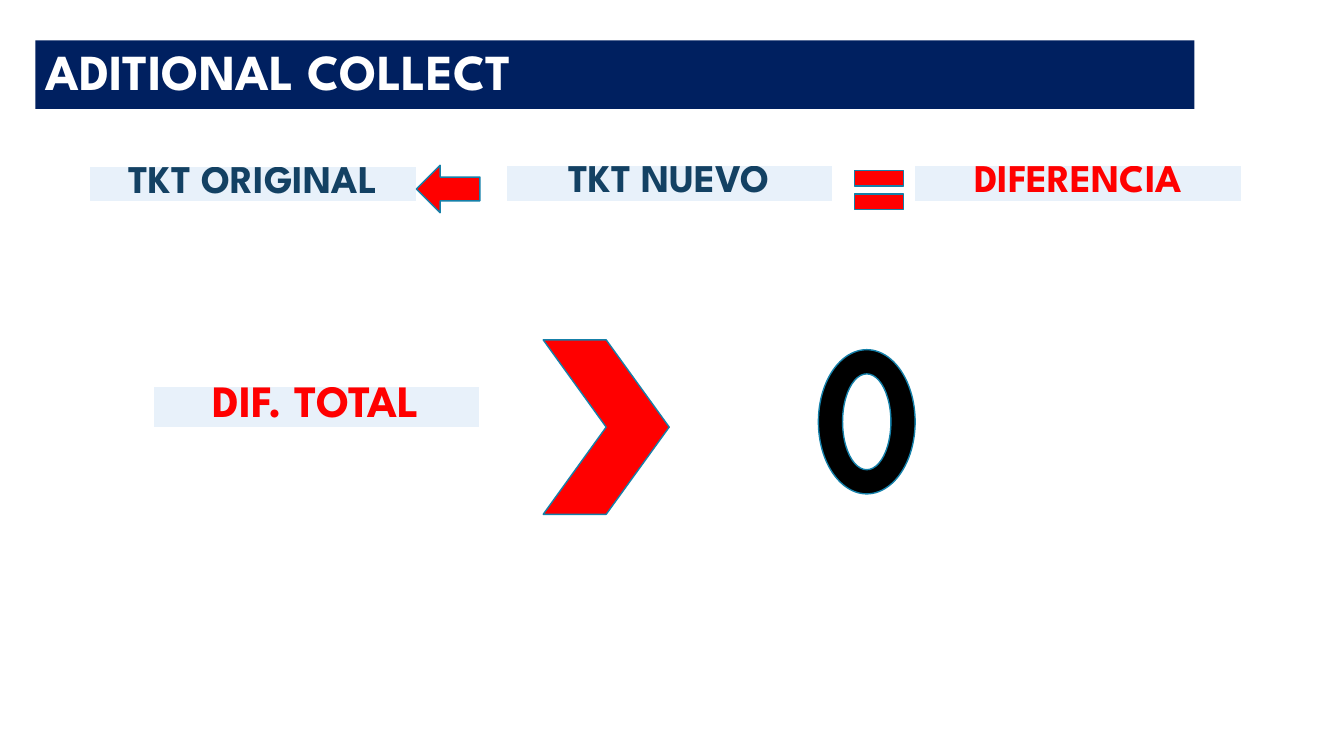
import pptx
import pptx.util
import pptx.dml.color
import pptx.enum.shapes
import pptx.enum.text
import pptx.oxml
import pptx.oxml.ns

Pt = pptx.util.Pt
MSO = pptx.enum.shapes.MSO_SHAPE
ALIGN = pptx.enum.text.PP_ALIGN
FONT = "League Spartan"
COLORS = {
    "navy": "002060",
    "blue": "134163",
    "pale": "E8F1FA",
    "outline": "1580A9",
    "red": "FF0000",
    "black": "000000",
    "white": "FFFFFF",
}


def rgb(color):
    return pptx.dml.color.RGBColor.from_string(COLORS[color])


def paint(fill, color):
    fill.solid()
    fill.fore_color.rgb = rgb(color)


def style_text(paragraph, size, color, align):
    paragraph.alignment = align
    paragraph.font.name = FONT
    paragraph.font.size = Pt(size)
    paragraph.font.bold = True
    paragraph.font.color.rgb = rgb(color)


def add_heading(slide, text):
    heading = slide.shapes.title
    heading.left, heading.top = Pt(25.2), Pt(28.8)
    heading.width, heading.height = Pt(828), Pt(49)
    paint(heading.fill, "navy")
    frame = heading.text_frame
    frame.text = text
    frame.auto_size = pptx.enum.text.MSO_AUTO_SIZE.NONE
    frame.vertical_anchor = pptx.enum.text.MSO_ANCHOR.MIDDLE
    frame.paragraphs[0].line_spacing = 0.9
    style_text(frame.paragraphs[0], 36, "white", ALIGN.LEFT)


def add_borders(cell):
    properties = cell._tc.get_or_add_tcPr()
    for side in ("lnL", "lnR", "lnT", "lnB"):
        properties.append(pptx.oxml.parse_xml(
            f'<a:{side} {pptx.oxml.ns.nsdecls("a")} w="{Pt(1)}"><a:solidFill>'
            f'<a:srgbClr val="{COLORS["white"]}"/></a:solidFill></a:{side}>'))


def add_label(slide, text, left, top, height, size, color):
    holder = slide.shapes.add_table(
        1, 1, Pt(left), Pt(top), Pt(233.3), Pt(height))
    label = holder.table
    label.first_row = False
    label.horz_banding = False
    label.rows[0].height = Pt(0)
    holder.height = Pt(height)
    cell = label.cell(0, 0)
    cell.margin_left = cell.margin_right = Pt(7.2)
    cell.margin_top = cell.margin_bottom = Pt(0)
    add_borders(cell)
    paint(cell.fill, "pale")
    cell.text = text
    style_text(cell.text_frame.paragraphs[0], size, color, ALIGN.CENTER)


def add_symbol(slide, kind, left, top, width, height, color):
    symbol = slide.shapes.add_shape(
        kind, Pt(left), Pt(top), Pt(width), Pt(height))
    symbol.shadow.inherit = False
    paint(symbol.fill, color)
    symbol.line.color.rgb = rgb(COLOR_OF_OUTLINE)
    symbol.line.width = Pt(1)


COLOR_OF_OUTLINE = "outline"


def main():
    deck = pptx.Presentation()
    deck.slide_width, deck.slide_height = Pt(960), Pt(540)
    slide = deck.slides.add_slide(deck.slide_layouts[5])
    add_heading(slide, "ADITIONAL COLLECT")

    add_label(slide, "TKT ORIGINAL", 64.1, 118.6, 34, 28, "blue")
    add_label(slide, "TKT NUEVO", 361.4, 118.3, 34, 28, "blue")
    add_label(slide, "DIF. TOTAL", 109.4, 275.8, 38, 32, "red")
    add_label(slide, "DIFERENCIA", 653.4, 118.3, 34, 28, "red")

    add_symbol(slide, MSO.MATH_EQUAL, 604, 112.3, 47.5, 46.8, "red")
    add_symbol(slide, MSO.CHEVRON, 388, 242.8, 90, 124.6, "red")
    add_symbol(slide, MSO.DONUT, 584.6, 249.8, 69.1, 103, "black")
    add_symbol(slide, MSO.LEFT_ARROW, 297.4, 118, 45.4, 34, "red")

    deck.save("out.pptx")


if __name__ == "__main__":
    main()
